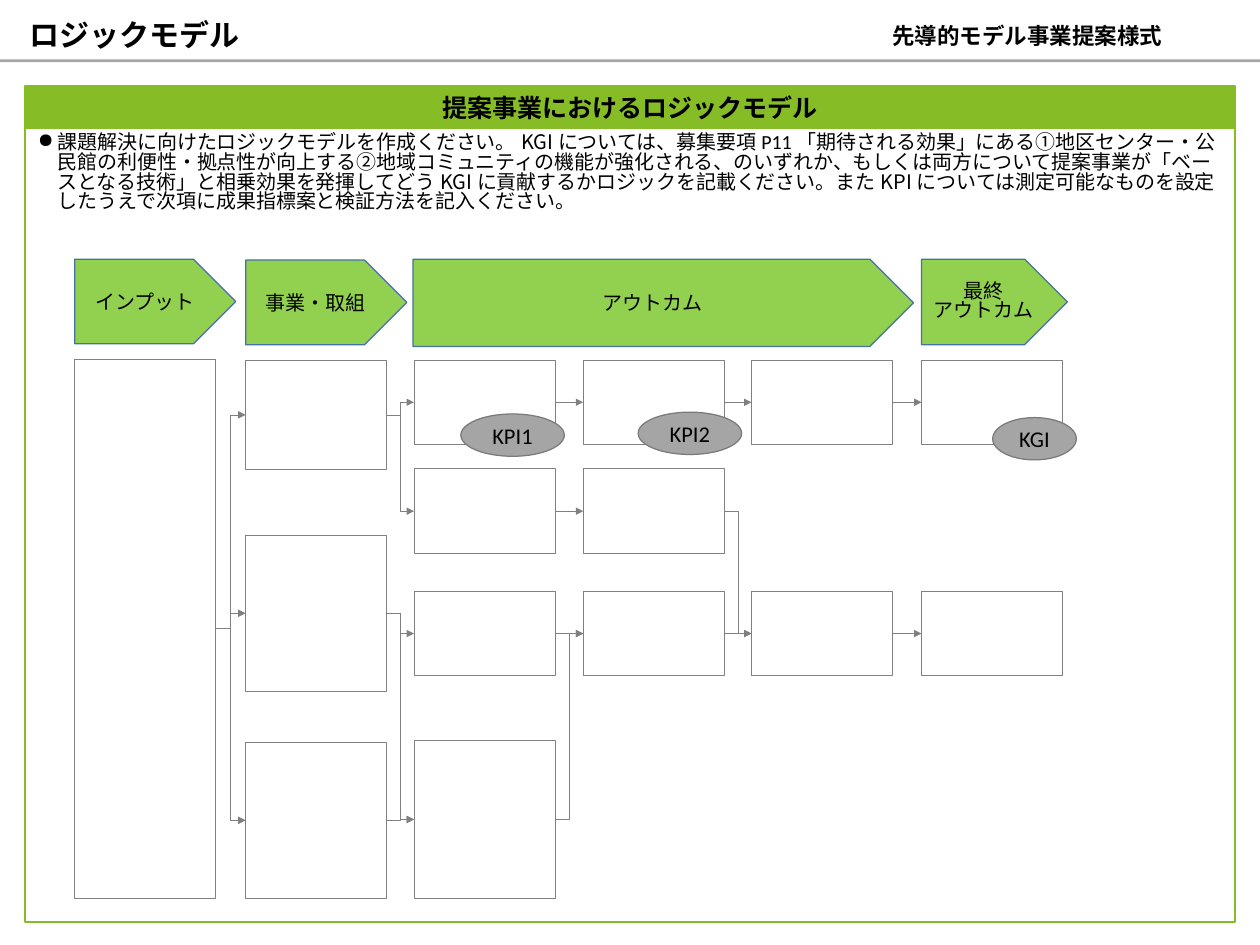
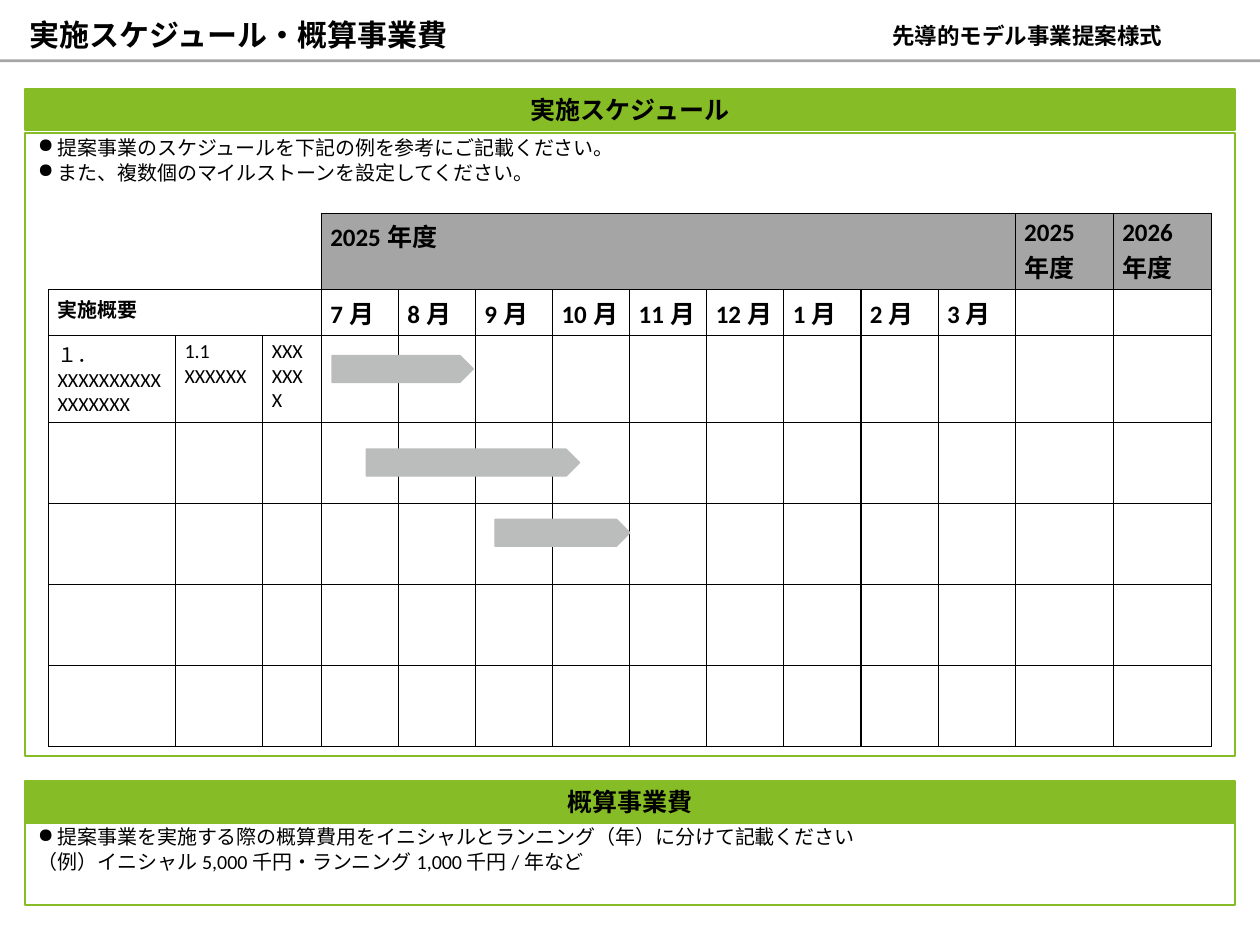
from dataclasses import dataclass
from lxml import etree
from pptx import Presentation
from pptx.dml.color import RGBColor
from pptx.enum.shapes import MSO_CONNECTOR as CXN, MSO_SHAPE as SHAPE
from pptx.enum.text import MSO_ANCHOR as ANCHOR, MSO_AUTO_SIZE as FIT, PP_ALIGN as ALIGN
from pptx.oxml.ns import qn
from pptx.util import Inches, Pt


@dataclass(frozen=True)
class Theme:
    black: str = "000000"
    white: str = "FFFFFF"
    green: str = "86BC25"
    lime: str = "92D050"
    blue: str = "43739E"
    grey: str = "A5A5A5"
    dark_grey: str = "7A7A7A"
    box_line: str = "808080"
    bar: str = "BBBCBC"
    latin: str = "Calibri"
    cjk: str = "Noto Sans CJK JP"
    title: int = 24
    band: int = 20
    label: int = 18
    body: int = 16


T = Theme()
COLUMNS = [0, 1.9, 3.77, 5.65, 7.52, 9.41]
STAGES = [(0, 0, 1.79, 0.94, ["インプット"]), (1.9, 0.01, 1.79, 0.94, ["事業・取組"]),
          (3.76, 0, 5.56, 0.97, ["アウトカム"]), (9.41, 0, 1.62, 0.95, ["最終", "アウトカム"])]
BOXES = {
    "input": (0, 1.11, 5.99), "work1": (1, 1.12, 1.22), "work2": (1, 3.07, 1.73),
    "work3": (1, 5.37, 1.73), "kpi1": (2, 1.12, 0.94), "kpi2": (3, 1.12, 0.94),
    "effect": (4, 1.12, 0.94), "kgi": (5, 1.12, 0.94), "side1": (2, 2.33, 0.94),
    "side2": (3, 2.33, 0.94), "main1": (2, 3.69, 0.94), "main2": (3, 3.69, 0.94),
    "main3": (4, 3.69, 0.94), "main4": (5, 3.69, 0.94), "base": (2, 5.35, 1.75),
}
STRAIGHT = ["kpi1 kpi2", "kpi2 effect", "effect kgi", "side1 side2",
            "main1 main2", "main2 main3", "main3 main4"]
BENT = ["input work1", "input work2", "input work3", "work1 kpi1", "work1 side1",
        "work2 main1", "work2 base", "work3 base", "side2 main3", "base main2"]
MARKERS = [("KPI1", 4.29, 1.72, 1.15), ("KPI2", 6.26, 1.7, 1.15), ("KGI", 10.2, 1.76, 0.93)]
MONTHS = ["7月", "8月", "9月", "10月", "11月", "12月", "1月", "2月", "3月"]
COL_WIDTHS = [1.41, 0.97, 0.65] + [0.857] * 9 + [1.09] * 2
ROW_HEIGHTS = [0.85, 0.5, 0.97] + [0.9] * 4
BARS = [(3.15, 1.58, 1.57), (3.53, 2.62, 2.37), (4.96, 3.4, 1.5)]


def rgb(value):
    return RGBColor.from_string(value)


def add_run(p, text, size, bold=False, latin=T.latin):
    r = p.add_run()
    r.text = text
    font = r.font
    font.size, font.bold = Pt(size), bold
    font.color.rgb = rgb(T.black)
    font.name = latin
    etree.SubElement(font._element, qn("a:ea"), typeface=T.cjk)


def set_frame(tf, anchor, inset_x=0.1, inset_y=0.05, wrap=True):
    tf.auto_size, tf.word_wrap, tf.vertical_anchor = FIT.NONE, wrap, anchor
    tf.margin_left = tf.margin_right = Inches(inset_x)
    tf.margin_top = tf.margin_bottom = Inches(inset_y)


def add_paragraph(tf, index):
    return tf.add_paragraph() if index else tf.paragraphs[0]


def add_block(s, kind, box, fill, line=None, weight=1):
    sp = s.shapes.add_shape(kind, *map(Inches, box))
    sp.shadow.inherit = False
    sp.fill.solid()
    sp.fill.fore_color.rgb = rgb(fill)
    if line:
        sp.line.color.rgb = rgb(line)
        sp.line.width = Pt(weight)
    else:
        sp.line.fill.background()
    return sp


def add_label(sp, lines, size):
    tf = sp.text_frame
    set_frame(tf, ANCHOR.MIDDLE)
    for i, line in enumerate(lines):
        p = add_paragraph(tf, i)
        p.alignment = ALIGN.CENTER
        if len(lines) > 1:
            p.line_spacing = 0.82
        add_run(p, line, size)


def add_header(s, title):
    sp = s.shapes.title
    sp.left, sp.top, sp.width, sp.height = map(Inches, (0.33, 0.21, 6.87, 0.37))
    note = s.shapes.add_textbox(*map(Inches, (9.11, 0.31, 4.61, 0.24)))
    for item, text, size, align in ((sp, title, T.title, ALIGN.LEFT),
                                    (note, "先導的モデル事業提案様式", T.label, ALIGN.CENTER)):
        set_frame(item.text_frame, ANCHOR.BOTTOM, 0, 0)
        p = item.text_frame.paragraphs[0]
        p.alignment = align
        add_run(p, text, size, True)
    add_block(s, SHAPE.RECTANGLE, (0, 0.66, 14, 0.03), T.grey)


def add_panel(s, top, height, heading, paragraphs, gap=0):
    left, width, band = 0.28, 13.44, 0.46
    sp = add_block(s, SHAPE.RECTANGLE, (left, top, width, band), T.green, T.green, 1.5)
    set_frame(sp.text_frame, ANCHOR.MIDDLE, 0.14, 0.07, False)
    p = sp.text_frame.paragraphs[0]
    p.alignment = ALIGN.CENTER
    add_run(p, heading, T.band, True)
    sp = add_block(s, SHAPE.RECTANGLE, (left, top + band + gap, width, height),
                   T.white, T.green, 1.5)
    tf = sp.text_frame
    set_frame(tf, ANCHOR.TOP, 0.14, 0.07)
    for i, (bulleted, runs) in enumerate(paragraphs):
        p = add_paragraph(tf, i)
        p.alignment = ALIGN.LEFT
        p.line_spacing = 0.82
        if i:
            p.space_before = Pt(4.3)
        if bulleted:
            pPr = p._p.get_or_add_pPr()
            pPr.set("marL", str(Inches(0.22)))
            pPr.set("indent", str(-Inches(0.22)))
            etree.SubElement(pPr, qn("a:buChar"), char="●")
        for text, latin in runs:
            add_run(p, text, T.body, latin=latin)


def add_link(s, kind, start, end):
    link = s.shapes.add_connector(kind, 0, 0, 0, 0)
    link.begin_connect(start, 3)
    link.end_connect(end, 1)
    link.line.color.rgb = rgb(T.box_line)
    link.line.width = Pt(0.5)
    etree.SubElement(link.line._get_or_add_ln(), qn("a:tailEnd"), type="triangle")
    etree.SubElement(link._element.spPr, qn("a:effectLst"))


def add_logic_model(s, left, top):
    for x, y, w, h, lines in STAGES:
        sp = add_block(s, SHAPE.PENTAGON, (left + x, top + y, w, h), T.lime, T.blue)
        add_label(sp, lines, T.body)
    boxes = {name: add_block(s, SHAPE.RECTANGLE, (left + COLUMNS[col], top + y, 1.57, h),
                             T.white, T.box_line, 0.75)
             for name, (col, y, h) in BOXES.items()}
    for kind, pairs in ((CXN.STRAIGHT, STRAIGHT), (CXN.ELBOW, BENT)):
        for pair in pairs:
            start, end = pair.split()
            add_link(s, kind, boxes[start], boxes[end])
    for text, x, y, w in MARKERS:
        sp = add_block(s, SHAPE.OVAL, (left + x, top + y, w, 0.47), T.grey, T.dark_grey)
        add_label(sp, [text], T.label)


def style_cell(cell, sides, fill):
    tcPr = cell._tc.get_or_add_tcPr()
    for side in "LRTB":
        visible = side in sides
        ln = etree.SubElement(tcPr, qn(f"a:ln{side}"), w=str(Pt(1) if visible else 0))
        paint = etree.SubElement(ln, qn("a:solidFill" if visible else "a:noFill"))
        if visible:
            etree.SubElement(paint, qn("a:srgbClr"), val=T.black)
    if fill:
        cell.fill.solid()
        cell.fill.fore_color.rgb = rgb(fill)
    else:
        cell.fill.background()


def add_schedule(s, left, top):
    frame = s.shapes.add_table(len(ROW_HEIGHTS), len(COL_WIDTHS), Inches(left), Inches(top),
                               Inches(sum(COL_WIDTHS)), Inches(sum(ROW_HEIGHTS)))
    table = frame.table
    table.first_row = table.horz_banding = False
    for col, width in zip(table.columns, COL_WIDTHS):
        col.width = Inches(width)
    for row, height in zip(table.rows, ROW_HEIGHTS):
        row.height = Inches(height)
    for i, row in enumerate(table.rows):
        for j, cell in enumerate(row.cells):
            blank = i == 0 and j < 3
            sides = ("RB" if j == 2 else "B") if blank else "LRTB"
            style_cell(cell, sides, T.grey if i == 0 and not blank else None)
    for row, first, last in ((0, 0, 2), (0, 3, 11), (1, 0, 2)):
        table.cell(row, first).merge(table.cell(row, last))
    texts = [(0, 3, "2025年度", T.band), (0, 12, "2025年度", T.band),
             (0, 13, "2026年度", T.band), (1, 0, "実施概要", T.body),
             (2, 0, "１．XXXXXXXXXXXXXXXXX", T.body), (2, 1, "1.1 XXXXXX", T.body),
             (2, 2, "XXXXXXX", T.body)]
    texts += [(1, 3 + i, month, T.band) for i, month in enumerate(MONTHS)]
    for row, col, text, size in texts:
        add_run(table.cell(row, col).text_frame.paragraphs[0], text, size, row < 2)
    for x, y, w in BARS:
        add_block(s, SHAPE.PENTAGON, (left + x, top + y, w, 0.3), T.bar, T.bar)


def build_logic_slide(s):
    add_header(s, "ロジックモデル")
    add_panel(s, 0.96, 8.82, "提案事業におけるロジックモデル", [(True, [
        ("課題解決に向けたロジックモデルを作成ください。KGIについては、", T.cjk),
        ("募集要項P11", T.latin),
        ("「期待される効果」にある①地区センター・公民館の利便性・拠点性が向上する"
         "②地域コミュニティの機能が強化される、のいずれか、もしくは両方について提案事業が"
         "「ベースとなる技術」と相乗効果を発揮してどうKGIに貢献するかロジックを記載ください。"
         "またKPIについては測定可能なものを設定したうえで次項に成果指標案と検証方法を記入ください。",
         T.cjk)])])
    add_logic_model(s, 0.83, 2.88)


def build_schedule_slide(s):
    add_header(s, "実施スケジュール・概算事業費")
    add_panel(s, 0.99, 6.92, "実施スケジュール", [
        (True, [("提案事業のスケジュールを下記の例を参考にご記載ください。", T.latin)]),
        (True, [("また、複数個のマイルストーンを設定してください。", T.latin)])], 0.03)
    add_schedule(s, 0.54, 2.37)
    add_panel(s, 8.68, 0.92, "概算事業費", [
        (True, [("提案事業を実施する際の概算費用をイニシャルとランニング（年）に分けて記載ください",
                 T.latin)]),
        (False, [("（例）イニシャル5,000千円・ランニング1,000千円/年など", T.latin)])])


def main():
    prs = Presentation()
    prs.slide_width, prs.slide_height = Inches(14), Inches(10.5)
    for build in (build_logic_slide, build_schedule_slide):
        build(prs.slides.add_slide(prs.slide_layouts[5]))
    prs.save("out.pptx")


if __name__ == "__main__":
    main()
